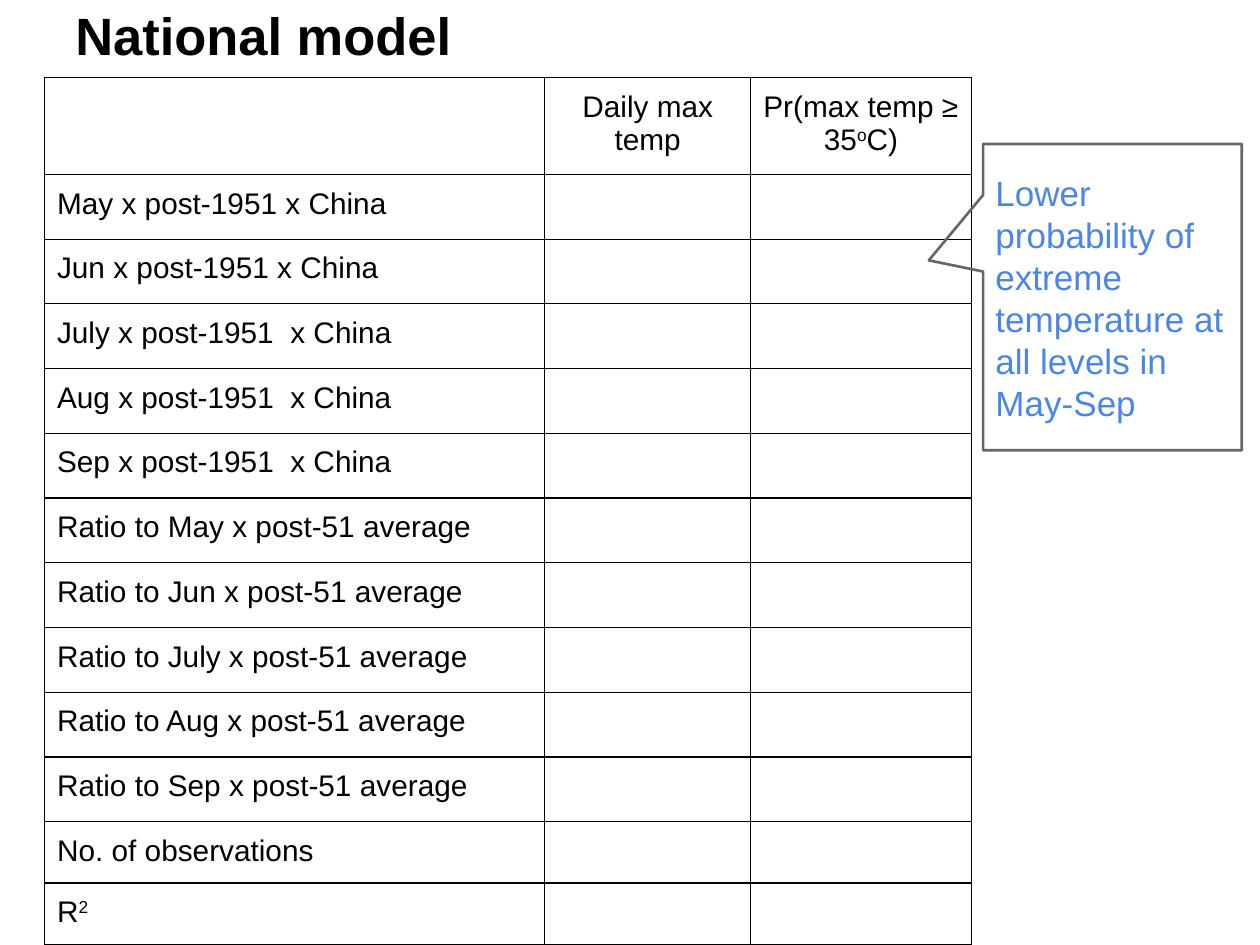
from dataclasses import dataclass

from lxml import etree
from pptx import Presentation
from pptx.dml.color import RGBColor
from pptx.enum.shapes import MSO_SHAPE
from pptx.enum.text import MSO_ANCHOR, PP_ALIGN
from pptx.oxml.ns import qn
from pptx.util import Pt

CALLOUT = MSO_SHAPE.RECTANGULAR_CALLOUT
LEFT, CENTER = PP_ALIGN.LEFT, PP_ALIGN.CENTER
TOP, MIDDLE, BOTTOM = MSO_ANCHOR.TOP, MSO_ANCHOR.MIDDLE, MSO_ANCHOR.BOTTOM


@dataclass(frozen=True)
class Theme:
    font: str = "Arial"
    ink: str = "000000"
    accent: str = "4A86E8"
    outline: str = "666666"
    title_size: float = 30
    table_size: float = 17
    callout_size: float = 20
    border: float = 0.75
    callout_line: float = 1.5
    inset: float = 7.2


THEME = Theme()
HEADER = ["", "Daily max temp", "Pr(max temp ≥ 35^o^C)"]
LABELS = (
    [f"{month} x post-1951 x China" for month in ("May", "Jun")]
    + [f"{month} x post-1951  x China" for month in ("July", "Aug", "Sep")]
    + [f"Ratio to {month} x post-51 average"
       for month in ("May", "Jun", "July", "Aug", "Sep")]
    + ["No. of observations", "R^2^"]
)
COLUMN_WIDTHS = [286, 117.5, 126.2]
ROW_HEIGHTS = [52.5] + [37] * 10 + [35] * 2


def set_insets(target):
    target.margin_left = target.margin_right = Pt(THEME.inset)
    target.margin_top = target.margin_bottom = Pt(THEME.inset)


def write_text(tf, text, size, color=THEME.ink, bold=False, align=LEFT):
    p = tf.paragraphs[0]
    p.alignment = align
    p.font.size = Pt(size)
    for i, part in enumerate(text.split("^")):
        if not part:
            continue
        r = p.add_run()
        r.text = part
        r.font.name = THEME.font
        r.font.size = Pt(size)
        r.font.bold = bold
        r.font.color.rgb = RGBColor.from_string(color)
        if i % 2:
            r.font._element.set("baseline", "30000")


def set_borders(cell):
    tcPr = cell._tc.get_or_add_tcPr()
    for i, side in enumerate(("lnL", "lnR", "lnT", "lnB")):
        ln = etree.Element(qn(f"a:{side}"), w=str(Pt(THEME.border)))
        fill = etree.SubElement(ln, qn("a:solidFill"))
        etree.SubElement(fill, qn("a:srgbClr"), val=THEME.ink)
        tcPr.insert(i, ln)


def add_title(s, text, left, top, width, height):
    tf = s.shapes.add_textbox(Pt(left), Pt(top), Pt(width), Pt(height)).text_frame
    tf.word_wrap = True
    tf.vertical_anchor = BOTTOM
    set_insets(tf)
    write_text(tf, text, THEME.title_size, bold=True)


def add_grid(s, rows, left, top):
    frame = s.shapes.add_table(
        len(rows), len(COLUMN_WIDTHS), Pt(left), Pt(top),
        Pt(sum(COLUMN_WIDTHS)), Pt(sum(ROW_HEIGHTS)))
    table = frame.table
    table.first_row = table.horz_banding = False
    for column, width in zip(table.columns, COLUMN_WIDTHS):
        column.width = Pt(width)
    for i, (row, height) in enumerate(zip(table.rows, ROW_HEIGHTS)):
        row.height = Pt(height)
        for cell, text in zip(row.cells, rows[i]):
            cell.fill.background()
            cell.vertical_anchor = TOP
            set_insets(cell)
            set_borders(cell)
            write_text(cell.text_frame, text, THEME.table_size,
                       align=LEFT if i else CENTER)


def add_callout(s, text, left, top, width, height, tip):
    sp = s.shapes.add_shape(CALLOUT, Pt(left), Pt(top), Pt(width), Pt(height))
    sp.adjustments[0], sp.adjustments[1] = tip
    sp.shadow.inherit = False
    sp.fill.background()
    sp.line.color.rgb = RGBColor.from_string(THEME.outline)
    sp.line.width = Pt(THEME.callout_line)
    tf = sp.text_frame
    tf.word_wrap = True
    tf.vertical_anchor = MIDDLE
    set_insets(tf)
    write_text(tf, text, THEME.callout_size, THEME.accent)


def main():
    prs = Presentation()
    prs.slide_width, prs.slide_height = Pt(720), Pt(540)
    s = prs.slides.add_slide(prs.slide_layouts[6])
    add_title(s, "National model", 36, 8, 512, 36.7)
    add_grid(s, [HEADER] + [[label, "", ""] for label in LABELS], 25.4, 44.4)
    add_callout(
        s, "Lower probability of extreme temperature at all levels in May-Sep",
        561.8, 82.3, 147.8, 175, tip=(-0.71, -0.12))
    prs.save("out.pptx")


if __name__ == "__main__":
    main()
